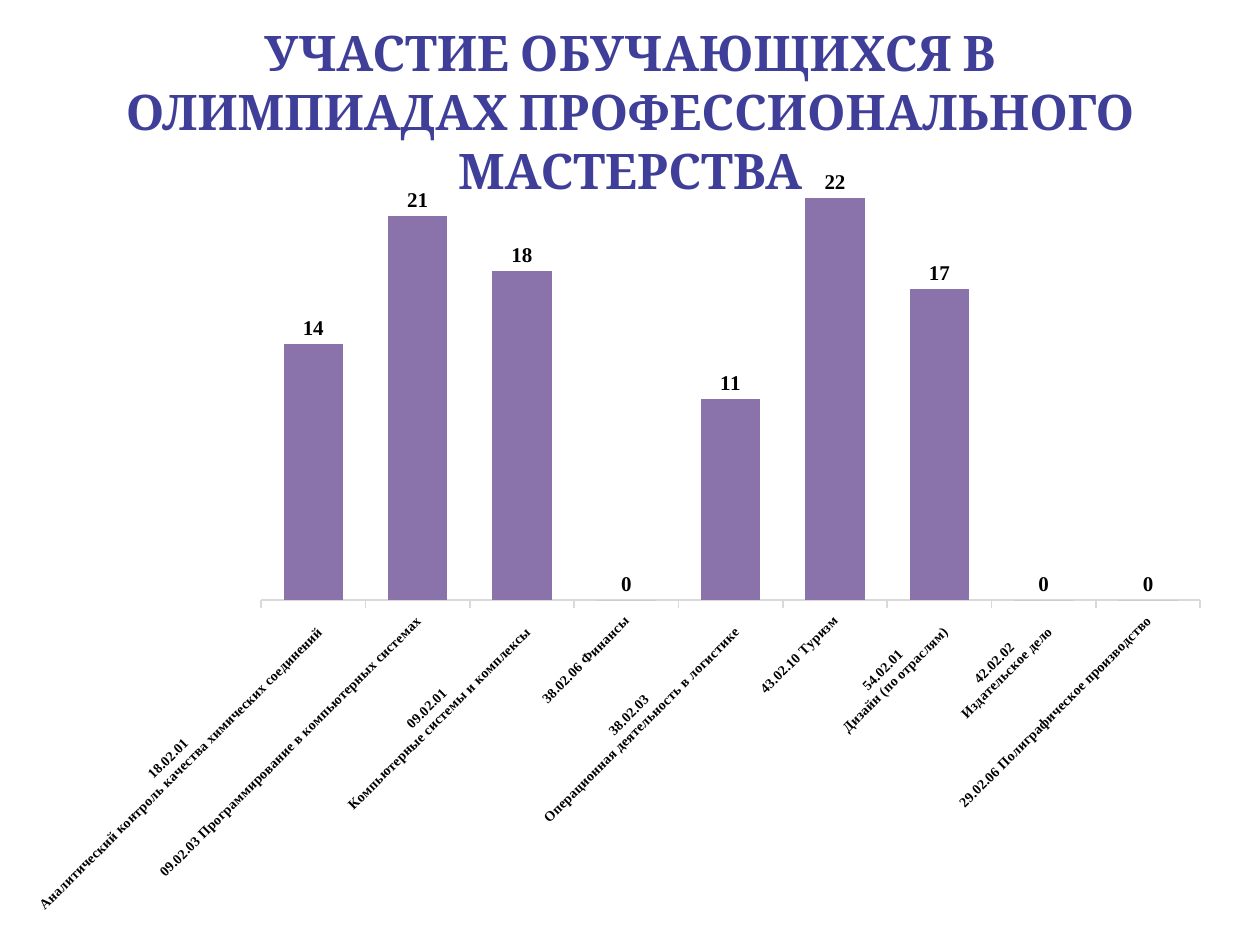
from lxml import etree
from pptx import Presentation
from pptx.chart.data import CategoryChartData
from pptx.dml.color import RGBColor
from pptx.enum.chart import XL_CHART_TYPE, XL_LABEL_POSITION, XL_TICK_MARK
from pptx.enum.text import MSO_ANCHOR, PP_ALIGN
from pptx.oxml import parse_xml
from pptx.oxml.ns import nsdecls
from pptx.util import Inches, Pt

COLUMN = XL_CHART_TYPE.COLUMN_CLUSTERED
ABOVE = XL_LABEL_POSITION.OUTSIDE_END
TICK_OUT = XL_TICK_MARK.OUTSIDE
TOP, CENTER = MSO_ANCHOR.TOP, PP_ALIGN.CENTER


def color(code):
    return RGBColor.from_string(code)


def style(font, face, size, code, bold=True):
    font.name, font.size, font.bold = face, Pt(size), bold
    font.color.rgb = color(code)


prs = Presentation()
prs.slide_width, prs.slide_height = Inches(10), Inches(7.5)
wide, high = prs.slide_width, prs.slide_height
slide = prs.slides.add_slide(prs.slide_layouts[6])

# Chart of entrants by study programme
counts = [
    ("18.02.01 \nАналитический контроль качества химических соединений", 14),
    ("09.02.03 Программирование в компьютерных системах", 21),
    ("09.02.01 \nКомпьютерные системы и комплексы", 18),
    ("38.02.06 Финансы", 0),
    ("38.02.03 \nОперационная деятельность в логистике", 11),
    ("43.02.10 Туризм", 22),
    ("54.02.01 \nДизайн (по отраслям)", 17),
    ("42.02.02 \nИздательское дело", 0),
    ("29.02.06 Полиграфическое производство", 0),
]
data = CategoryChartData()
data.categories = [name for name, count in counts]
data.add_series("Series 1", [count for name, count in counts])

# Title
title = slide.shapes.add_textbox(
    int(wide * 0.05), Inches(0.13), int(wide * 0.9), int(high / 6))
frame = title.text_frame
frame.word_wrap = True
frame.vertical_anchor = TOP
para = frame.paragraphs[0]
para.alignment = CENTER
run = para.add_run()
run.text = "УЧАСТИЕ ОБУЧАЮЩИХСЯ В ОЛИМПИАДАХ ПРОФЕССИОНАЛЬНОГО МАСТЕРСТВА"
style(run.font, "Cambria", 28, "3F3F9A")
edge = parse_xml(
    f'<a:ln {nsdecls("a")} w="{Pt(2.25)}"><a:solidFill>'
    '<a:srgbClr val="A585B1"/></a:solidFill></a:ln>')
run.font._element.insert(0, edge)

chart = slide.shapes.add_chart(
    COLUMN, 0, Inches(1.01), Inches(9.72), Inches(6.36), data).chart
chart.has_title = chart.has_legend = False
style(chart.font, "Times New Roman", 10, "000000", bold=False)

plot = chart.plots[0]
plot.gap_width = 75
plot.vary_by_categories = False
bars = plot.series[0]
bars.format.fill.solid()
bars.format.fill.fore_color.rgb = color("8A73AB")
labels = bars.data_labels
labels.show_value = True
labels.position = ABOVE
style(labels.font, "Times New Roman", 12, "000000")

axis = chart.category_axis
axis.major_tick_mark = TICK_OUT
axis.format.line.width = Pt(1)
axis.format.line.color.rgb = color("D9D9D9")
ticks = axis.tick_labels
style(ticks.font, "Times New Roman", 8, "000000")
body = axis._element.txPr.find(etree.QName(edge).namespace.join("{}") + "bodyPr")
body.set("rot", str(-45 * 60000))

scale = chart.value_axis
scale.visible = False
scale.has_major_gridlines = False
scale.minimum_scale, scale.maximum_scale = 0, 25

prs.save("out.pptx")
